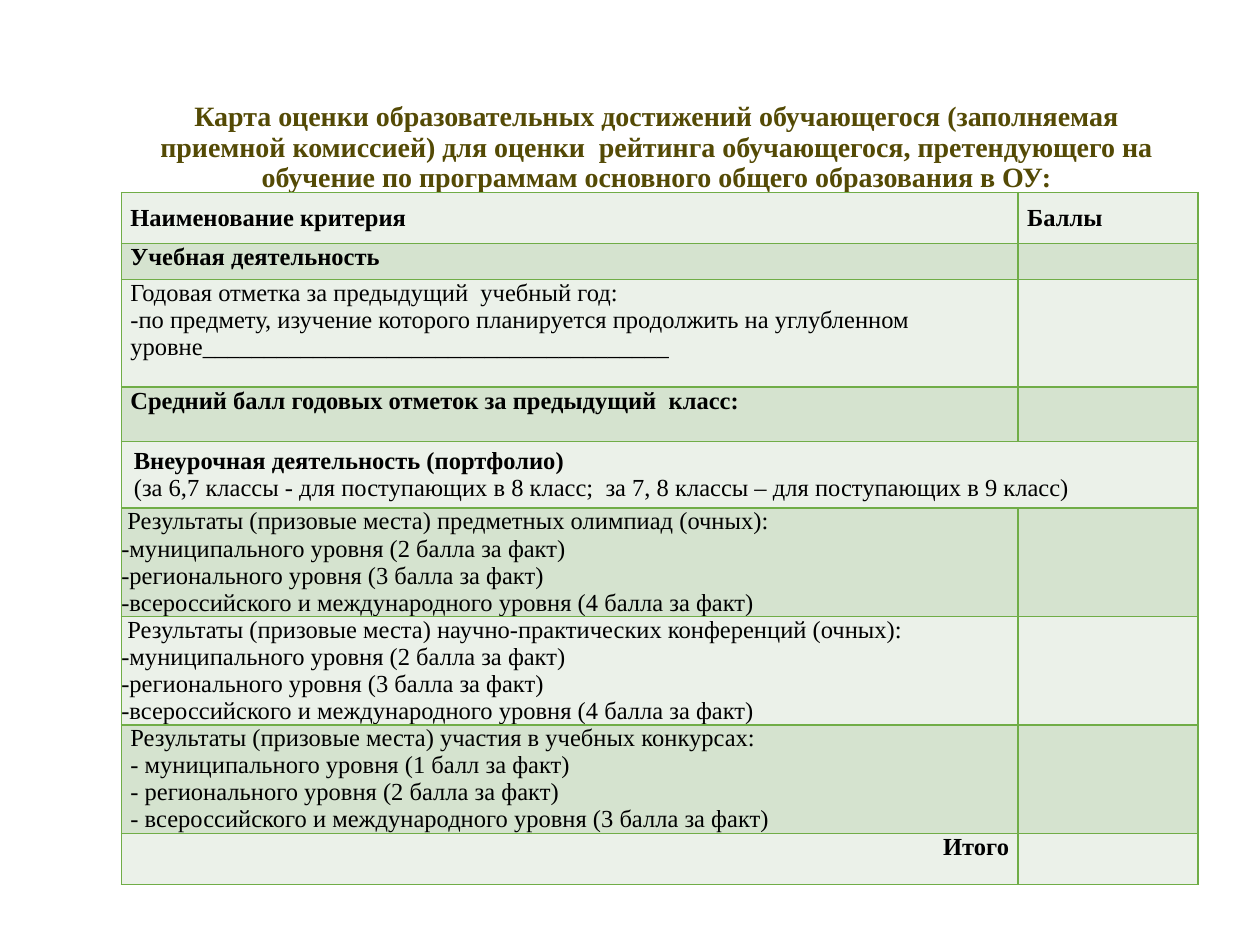
from dataclasses import dataclass

from lxml import etree
from pptx import Presentation
from pptx.dml.color import RGBColor
from pptx.enum import text
from pptx.oxml import ns
from pptx.util import Pt


@dataclass(frozen=True)
class Theme:
    font: str = "Times New Roman"
    title: str = "544A05"
    ink: str = "000000"
    border: str = "70AD47"
    bands: tuple = ("EBF1E9", "D5E3CF")
    title_size: int = 16
    body_size: int = 14


@dataclass
class Row:
    height: float
    lines: list
    score: str = ""
    bold_lines: int = 0
    anchor: text.MSO_ANCHOR = text.MSO_ANCHOR.TOP
    align: text.PP_ALIGN = text.PP_ALIGN.LEFT
    inset: tuple = (5.2, 0)
    first_indent: float = 0
    span: bool = False


THEME = Theme()
MIDDLE = text.MSO_ANCHOR.MIDDLE
TITLE = (
    "Карта оценки образовательных достижений обучающегося (заполняемая "
    "приемной комиссией) для оценки  рейтинга обучающегося, претендующего на "
    "обучение по программам основного общего образования в ОУ:"
)
LEVELS = [
    "-муниципального уровня (2 балла за факт)",
    "-регионального уровня (3 балла за факт)",
    "-всероссийского и международного уровня (4 балла за факт)",
]


def results_row(subject):
    return Row(61.7, [f"Результаты (призовые места) {subject} (очных):", *LEVELS],
               anchor=MIDDLE, inset=(0, 0), first_indent=3.5)


ROWS = [
    Row(29.2, ["Наименование критерия"], "Баллы", bold_lines=1, anchor=MIDDLE),
    Row(20.4, ["Учебная деятельность"], bold_lines=1),
    Row(61.7, [
        "Годовая отметка за предыдущий  учебный год:",
        "-по предмету, изучение которого планируется продолжить на "
        "углубленном уровне" + "_" * 38,
    ]),
    Row(30.9, ["Средний балл годовых отметок за предыдущий  класс:"], bold_lines=1),
    Row(38.2, [
        "Внеурочная деятельность (портфолио)",
        "(за 6,7 классы - для поступающих в 8 класс;  за 7, 8 классы – "
        "для поступающих в 9 класс)",
    ], bold_lines=1, inset=(7.2, 3.6), span=True),
    results_row("предметных олимпиад"),
    results_row("научно-практических конференций"),
    Row(61.7, [
        "Результаты (призовые места) участия в учебных конкурсах:",
        "- муниципального уровня (1 балл за факт)",
        "- регионального уровня (2 балла за факт)",
        "- всероссийского и международного уровня (3 балла за факт)",
    ]),
    Row(29.2, ["Итого"], bold_lines=1, align=text.PP_ALIGN.RIGHT),
]


def write(p, content, *, size, color=THEME.ink, bold=False,
          align=text.PP_ALIGN.LEFT, spacing=None):
    p.alignment = align
    if spacing:
        p.line_spacing = spacing
    r = p.add_run()
    r.text = content
    r.font.name = THEME.font
    r.font.size = Pt(size)
    r.font.bold = bold
    r.font.color.rgb = RGBColor.from_string(color)


def set_borders(cell):
    tc_pr = cell._tc.get_or_add_tcPr()
    for side in ("lnL", "lnR", "lnT", "lnB"):
        ln = etree.SubElement(tc_pr, ns.qn(f"a:{side}"), w=str(Pt(1)))
        fill = etree.SubElement(ln, ns.qn("a:solidFill"))
        etree.SubElement(fill, ns.qn("a:srgbClr"), val=THEME.border)


def format_cell(cell, row, color):
    set_borders(cell)
    cell.fill.solid()
    cell.fill.fore_color.rgb = RGBColor.from_string(color)
    cell.margin_left = cell.margin_right = Pt(row.inset[0])
    cell.margin_top = cell.margin_bottom = Pt(row.inset[1])
    cell.vertical_anchor = row.anchor


def fill_cell(cell, row, lines):
    tf = cell.text_frame
    for i, line in enumerate(lines):
        p = tf.paragraphs[0] if i == 0 else tf.add_paragraph()
        if line:
            write(p, line, size=THEME.body_size, bold=i < row.bold_lines,
                  align=row.align)
        else:
            etree.SubElement(p._p, ns.qn("a:endParaRPr"),
                             sz=str(THEME.body_size * 100))
    if row.first_indent:
        tf.paragraphs[0]._p.get_or_add_pPr().set("indent", str(Pt(row.first_indent)))


def add_title(s, left, top, width, height):
    sp = s.shapes.title
    sp.left, sp.top, sp.width, sp.height = map(Pt, (left, top, width, height))
    tf = sp.text_frame
    tf.word_wrap = True
    tf.auto_size = text.MSO_AUTO_SIZE.NONE
    tf.vertical_anchor = MIDDLE
    write(tf.paragraphs[0], TITLE, size=THEME.title_size, color=THEME.title,
          bold=True, align=text.PP_ALIGN.CENTER, spacing=0.9)


def add_score_table(s, left, top, width, score_width):
    height = sum(row.height for row in ROWS)
    frame = s.shapes.add_table(len(ROWS), 2, *map(Pt, (left, top, width, height)))
    table = frame.table
    table.first_row = table.horz_banding = False
    table.columns[0].width = Pt(width - score_width)
    table.columns[1].width = Pt(score_width)
    for i, row in enumerate(ROWS):
        table.rows[i].height = Pt(row.height)
        name, score = table.cell(i, 0), table.cell(i, 1)
        for cell in (name, score):
            format_cell(cell, row, THEME.bands[i % 2])
        if row.span:
            name.merge(score)
        else:
            fill_cell(score, row, [row.score])
        fill_cell(name, row, row.lines)


def main():
    prs = Presentation()
    prs.slide_width, prs.slide_height = Pt(720), Pt(540)
    s = prs.slides.add_slide(prs.slide_layouts[5])
    add_title(s, 67, 58.3, 616.3, 52.6)
    add_score_table(s, 69.3, 110, 615.2, 102.7)
    prs.save("out.pptx")


if __name__ == "__main__":
    main()
